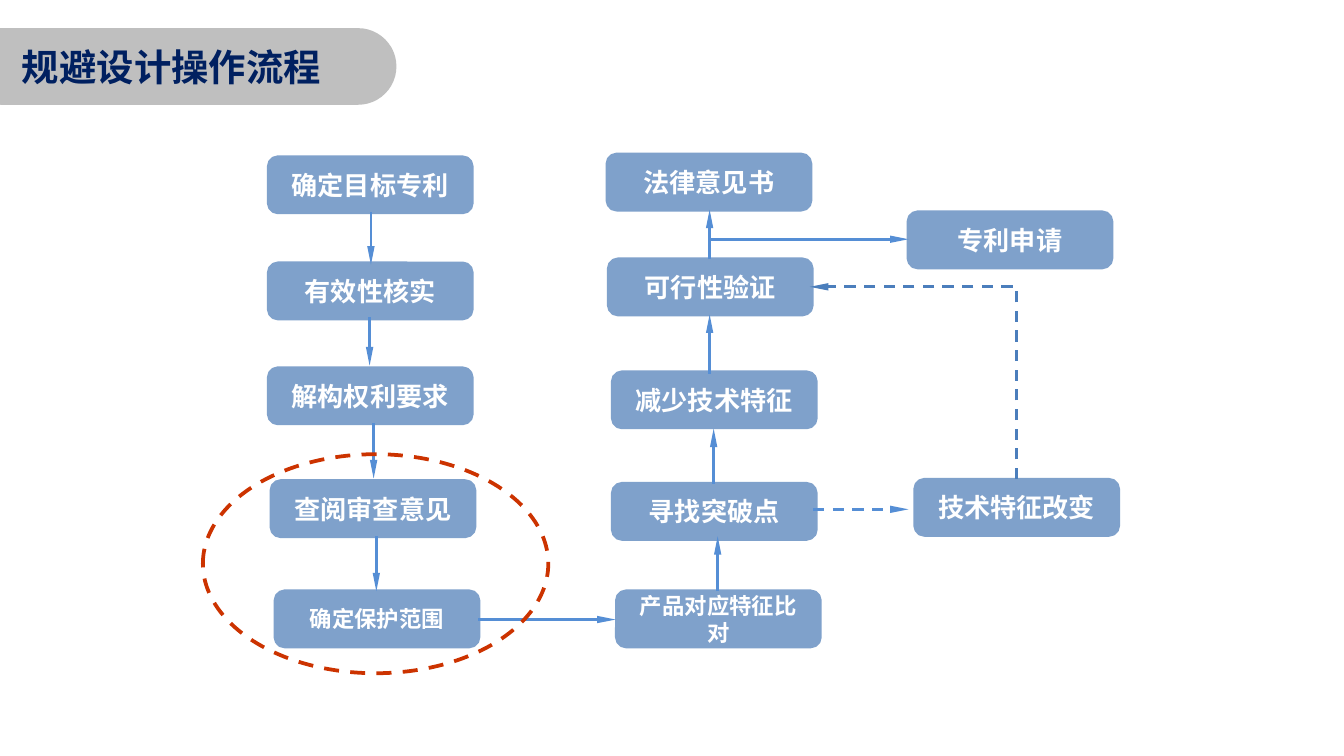
from lxml.etree import SubElement
from pptx import Presentation
from pptx.dml.color import RGBColor
from pptx.enum.dml import MSO_LINE
from pptx.enum.shapes import MSO_CONNECTOR, MSO_SHAPE
from pptx.enum.text import MSO_ANCHOR, PP_ALIGN
from pptx.oxml.ns import qn
from pptx.util import Emu, Pt

PX = 9144  # 100 px to the inch
FONT = "Noto Sans CJK SC"
BOX, ARROW, RETURN_ARROW = "7FA1CB", "558ED5", "4B7EBC"
TITLE_BG, TITLE_TEXT, HIGHLIGHT, WHITE = "BFBFBF", "002060", "CC3300", "FFFFFF"
BOX_W, BOX_H = 151, 41


def px(n):
    return Emu(n * PX)


def rgb(value):
    return RGBColor.from_string(value)


def add_shape(s, kind, x, y, w, h, fill=None, line=None):
    sp = s.shapes.add_shape(kind, px(x), px(y), px(w), px(h))
    sp.shadow.inherit = False
    if fill:
        sp.fill.solid()
        sp.fill.fore_color.rgb = rgb(fill)
    else:
        sp.fill.background()
    if line:
        sp.line.color.rgb = rgb(line)
        sp.line.width = Pt(2)
    else:
        sp.line.fill.background()
    return sp


def set_text(sp, text, size, color, align):
    tf = sp.text_frame
    tf.word_wrap = True
    tf.vertical_anchor = MSO_ANCHOR.MIDDLE
    p = tf.paragraphs[0]
    p.text = text
    p.alignment = align
    p.font.size = Pt(size)
    p.font.bold = True
    p.font.name = FONT
    p.font.color.rgb = rgb(color)
    for r in p.runs:
        SubElement(r._r.get_or_add_rPr(), qn("a:ea"), typeface=FONT)


def step(s, x, y, text, size=14):
    sp = add_shape(s, MSO_SHAPE.ROUNDED_RECTANGLE, x, y, BOX_W, BOX_H, BOX, BOX)
    set_text(sp, text, size, WHITE, PP_ALIGN.CENTER)


def arrow(s, x1, y1, x2, y2, color=ARROW, dashed=False, kind=MSO_CONNECTOR.STRAIGHT):
    cxn = s.shapes.add_connector(kind, px(x1), px(y1), px(x2), px(y2))
    cxn.line.color.rgb = rgb(color)
    cxn.line.width = Pt(1.5)
    if dashed:
        cxn.line.dash_style = MSO_LINE.DASH
    SubElement(cxn.line._get_or_add_ln(), qn("a:tailEnd"), type="triangle", w="sm", len="lg")
    SubElement(cxn._element.spPr, qn("a:effectLst"))
    return cxn


def corner_arrow(s, x1, y1, x2, y2):
    """Dashed arrow that goes up from the start, then left to the end."""
    run, rise = x1 - x2, y1 - y2
    cx, cy = (x1 + x2) / 2, (y1 + y2) / 2
    left, top = round(cx - rise / 2), round(cy - run / 2)
    cxn = arrow(s, left, top + run, left + rise, top, RETURN_ARROW, True, MSO_CONNECTOR.ELBOW)
    cxn._element.spPr.find(qn("a:xfrm")).set("rot", str(270 * 60000))
    cxn._element.spPr.find(qn("a:prstGeom")).set("prst", "bentConnector2")


def title_bar(s, x, y, w, h):
    sp = add_shape(s, MSO_SHAPE.ROUNDED_RECTANGLE, x, y, w, h, TITLE_BG)
    sp.adjustments[0] = 0.5
    sp.text_frame.margin_left = px(36)
    set_text(sp, "规避设计操作流程", 20, TITLE_TEXT, PP_ALIGN.LEFT)


def analysis_column(s, x, y):
    """Steps that run down to the protection scope."""
    for dx, dy, text, size in [
        (0, 0, "确定目标专利", 14),
        (0, 79, "有效性核实", 14),
        (0, 157, "解构权利要求", 14),
        (2, 241, "查阅审查意见", 14),
        (5, 323, "确定保护范围", 12),
    ]:
        step(s, x + dx, y + dy, text, size)
    for dx, start, end in [(76, 41, 80), (75, 119, 155), (78, 198, 239), (80, 282, 323)]:
        arrow(s, x + dx, y + start, x + dx, y + end)


def design_column(s, x, y):
    """Steps that run up to the legal opinion."""
    for dx, dy, text, size in [
        (0, 0, "法律意见书", 14),
        (1, 78, "可行性验证", 14),
        (4, 162, "减少技术特征", 14),
        (4, 245, "寻找突破点", 14),
        (7, 325, "产品对应特征比对", 12),
    ]:
        step(s, x + dx, y + dy, text, size)
    for dx, start, end in [(82, 325, 284), (79, 245, 204), (76, 163, 119), (76, 78, 41)]:
        arrow(s, x + dx, y + start, x + dx, y + end)


def side_branch(s, x, y):
    """Patent filing and feature change, with their links to the design column."""
    step(s, x, y, "专利申请")
    step(s, x + 5, y + 199, "技术特征改变")
    arrow(s, x - 148, y + 20, x, y + 20)
    arrow(s, x - 71, y + 221, x, y + 221, dashed=True)
    corner_arrow(s, x + 81, y + 199, x - 73, y + 56)


def highlight(s, x, y, w, h):
    sp = add_shape(s, MSO_SHAPE.OVAL, x, y, w, h, line=HIGHLIGHT)
    sp.line.dash_style = MSO_LINE.DASH


def main():
    prs = Presentation()
    prs.slide_width = px(1000)
    prs.slide_height = prs.slide_width * 9 // 16
    s = prs.slides.add_slide(prs.slide_layouts[6])
    analysis_column(s, 200, 117)
    design_column(s, 452, 115)
    arrow(s, 356, 461, 458, 461)
    side_branch(s, 676, 158)
    highlight(s, 151, 338, 257, 163)
    title_bar(s, -28, 21, 323, 57)
    prs.save("out.pptx")


if __name__ == "__main__":
    main()
